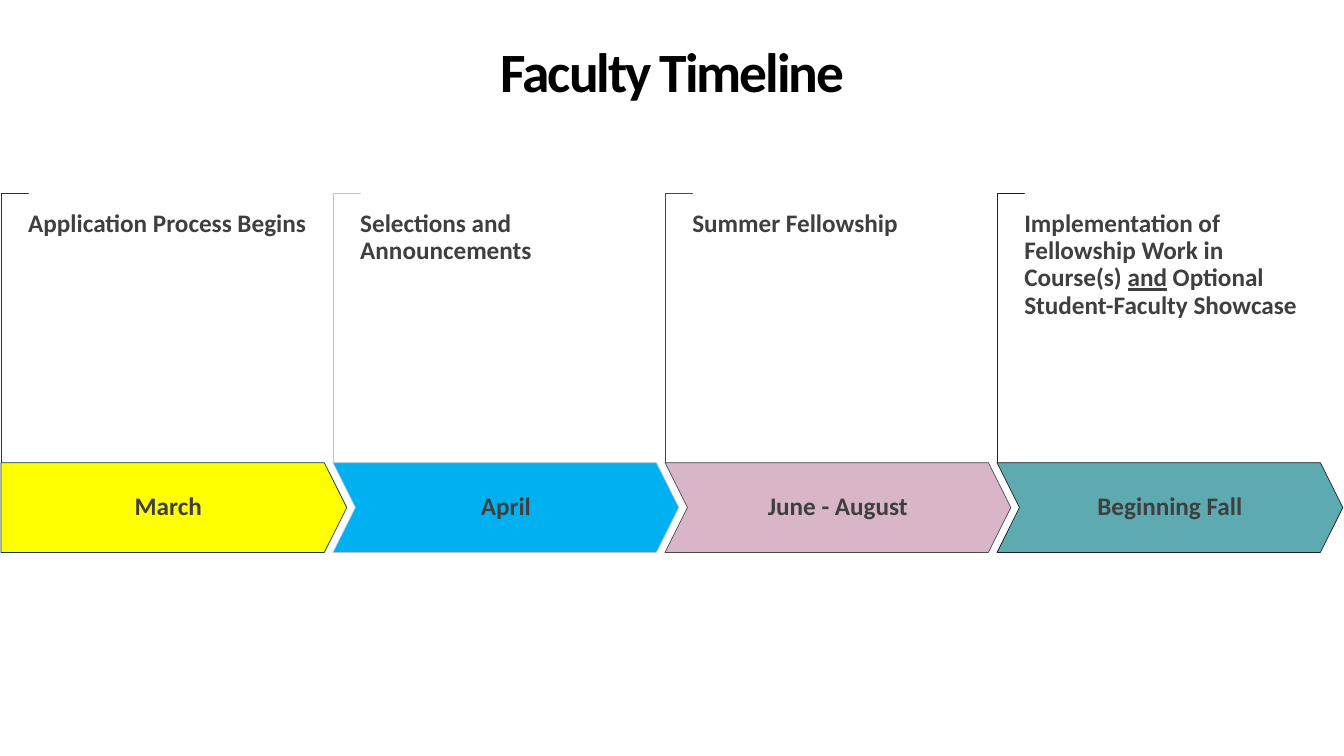
"""Build the Faculty Timeline slide: four stages along a row of arrows."""
import pptx
import pptx.dml.color
import pptx.enum.shapes
import pptx.enum.text
import pptx.util

Inches = pptx.util.Inches
Pt = pptx.util.Pt
SHAPES = pptx.enum.shapes.MSO_SHAPE
ANCHOR = pptx.enum.text.MSO_ANCHOR
ALIGN = pptx.enum.text.PP_ALIGN

COLORS = {
    "title": "000000", "text": "3F3F3F", "paper": "FFFFFF",
    "navy": "0F3955", "silver": "BBC3CD", "gray": "484848", "ink": "1F1F26",
    "yellow": "FFFF00", "blue": "00B0F0", "pink": "D8B5C7", "teal": "5DAAB0",
}
STAGES = [
    ("March", ["Application Process Begins"], "yellow", "navy"),
    ("April", ["Selections and Announcements"], "blue", "silver"),
    ("June - August", ["Summer Fellowship"], "pink", "gray"),
    ("Beginning Fall",
     ["Implementation of Fellowship Work in Course(s) ", "and",
      " Optional Student-Faculty Showcase"], "teal", "ink"),
]
FIRST_LEFT, STAGE_STEP = 0.01, 3.293
ARROW_TOP, ARROW_WIDTH, ARROW_HEIGHT = 4.59, 3.43, 0.89
BRACKET_LENGTH, BRACKET_DEPTH = 2.67, 0.27


def rgb(name):
    return pptx.dml.color.RGBColor.from_string(COLORS[name])


def style_font(font, size, color):
    font.name = "Calibri"
    font.size = Pt(size)
    font.bold = True
    font.color.rgb = rgb(color)


def set_frame(frame, anchor, side=0, end=0):
    frame.word_wrap = True
    frame.vertical_anchor = anchor
    frame.margin_left = frame.margin_right = Inches(side)
    frame.margin_top = frame.margin_bottom = Inches(end)


def add_title(page, text):
    title = page.shapes.title
    title.left, title.top = Inches(2.8), Inches(0.47)
    title.width, title.height = Inches(7.74), Inches(0.54)
    set_frame(title.text_frame, ANCHOR.MIDDLE)
    title.text_frame.text = text
    para = title.text_frame.paragraphs[0]
    para.alignment = ALIGN.CENTER
    para.line_spacing = 0.9
    span = para.runs[0]
    style_font(span.font, 39.6, "title")
    span.font._element.set("spc", "-150")


def add_outlined(page, kind, place, fill, line, adjustments):
    shape = page.shapes.add_shape(kind, *map(Inches, place))
    shape.shadow.inherit = False
    shape.fill.solid()
    shape.fill.fore_color.rgb = rgb(fill)
    shape.line.color.rgb = rgb(line)
    shape.line.width = Pt(0.5)
    for index, value in enumerate(adjustments):
        shape.adjustments[index] = value
    return shape


def add_bracket(page, left, line):
    place = (left + (BRACKET_DEPTH - BRACKET_LENGTH) / 2,
             ARROW_TOP - (BRACKET_LENGTH + BRACKET_DEPTH) / 2,
             BRACKET_LENGTH, BRACKET_DEPTH)
    bracket = add_outlined(page, SHAPES.CORNER, place, "paper", line, [0.01, 0.01])
    bracket.rotation = 90


def add_arrow(page, kind, left, label, fill, line):
    place = (left, ARROW_TOP, ARROW_WIDTH, ARROW_HEIGHT)
    arrow = add_outlined(page, kind, place, fill, line, [0.25])
    set_frame(arrow.text_frame, ANCHOR.MIDDLE, 0.12, 0.25)
    arrow.text_frame.text = label
    para = arrow.text_frame.paragraphs[0]
    para.alignment = ALIGN.CENTER
    para.line_spacing = 0.9
    style_font(para.runs[0].font, 18, "text")


def add_description(page, left, parts):
    box = page.shapes.add_textbox(
        Inches(left + 0.27), Inches(2.09), Inches(2.79), Inches(1.86))
    set_frame(box.text_frame, ANCHOR.TOP)
    para = box.text_frame.paragraphs[0]
    para.line_spacing = 0.9
    for index, part in enumerate(parts):
        span = para.add_run()
        span.text = part
        style_font(span.font, 18, "text")
        if index == 1:
            span.font.underline = True


def main():
    deck = pptx.Presentation()
    deck.slide_width, deck.slide_height = Inches(13.33), Inches(7.5)
    page = deck.slides.add_slide(deck.slide_layouts[5])
    add_title(page, "Faculty Timeline")
    for index, (label, parts, fill, line) in enumerate(STAGES):
        left = FIRST_LEFT + index * STAGE_STEP
        kind = SHAPES.CHEVRON if index else SHAPES.PENTAGON
        add_bracket(page, left, line)
        add_arrow(page, kind, left, label, fill, line)
        add_description(page, left, parts)
    deck.save("out.pptx")


if __name__ == "__main__":
    main()
